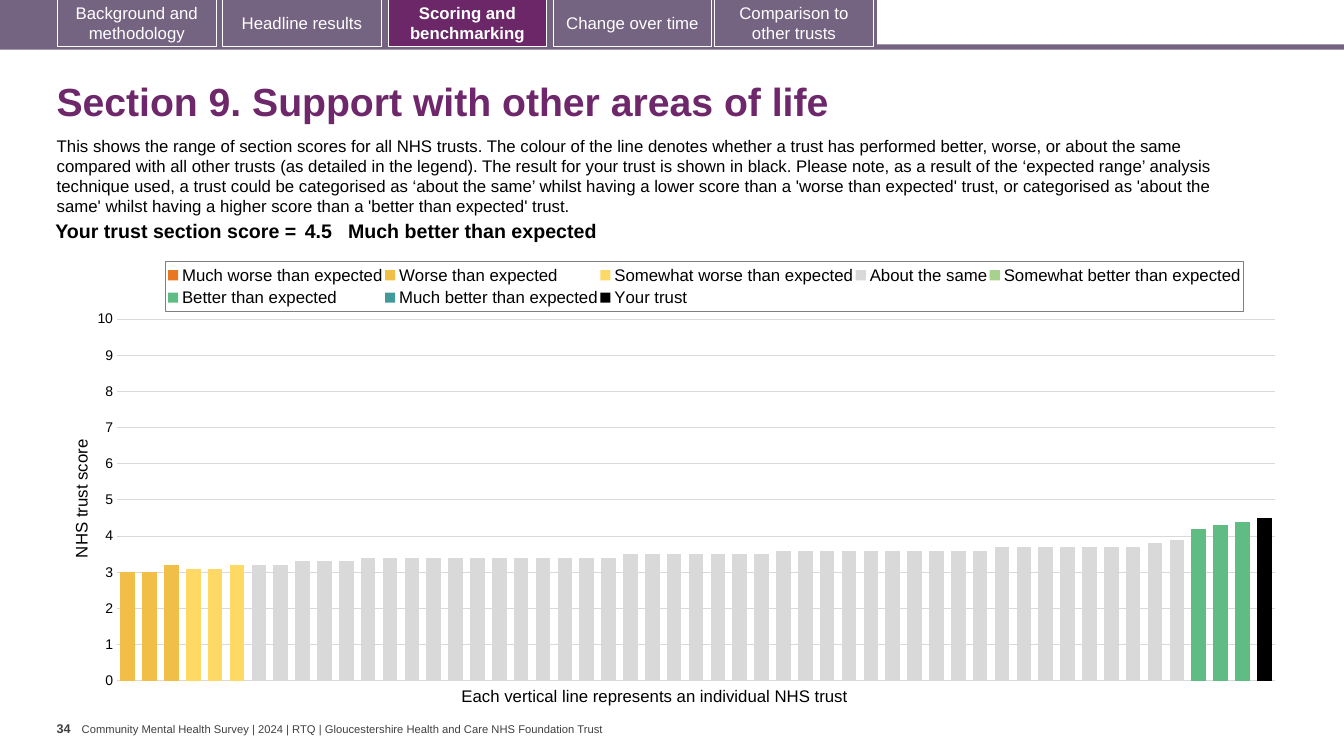
from copy import deepcopy
from dataclasses import dataclass

from lxml import etree
from pptx import Presentation
from pptx.chart.data import CategoryChartData
from pptx.dml.color import RGBColor
from pptx.enum.chart import XL_CHART_TYPE, XL_LEGEND_POSITION, XL_TICK_MARK
from pptx.enum.shapes import MSO_SHAPE
from pptx.enum.text import MSO_ANCHOR, PP_ALIGN
from pptx.oxml import parse_xml
from pptx.oxml.ns import qn
from pptx.util import Cm, Pt

COLUMN = XL_CHART_TYPE.COLUMN_CLUSTERED
LEGEND_TOP = XL_LEGEND_POSITION.TOP
NO_TICK = XL_TICK_MARK.NONE
RECTANGLE = MSO_SHAPE.RECTANGLE
MIDDLE, TOP = MSO_ANCHOR.MIDDLE, MSO_ANCHOR.TOP
LEFT, CENTER, RIGHT = PP_ALIGN.LEFT, PP_ALIGN.CENTER, PP_ALIGN.RIGHT


@dataclass(frozen=True)
class Theme:
    font: str = "Arial"
    band: str = "756382"
    active: str = "6B2768"
    title: str = "6D276A"
    white: str = "FFFFFF"
    black: str = "000000"
    footer: str = "404040"
    grid: str = "D9D9D9"
    legend_line: str = "7F7F7F"
    title_size: float = 28
    score_size: float = 14
    body_size: float = 12
    axis_size: float = 10
    page_size: float = 9
    footer_size: float = 8


THEME = Theme()

TABS = [
    ("Background and methodology", 1.45),
    ("Headline results", 5.61),
    ("Scoring and benchmarking", 9.78),
    ("Change over time", 13.94),
    ("Comparison to other trusts", 18.01),
]
ACTIVE_TAB = "Scoring and benchmarking"
INTRODUCTION = (
    "This shows the range of section scores for all NHS trusts. The colour of the line "
    "denotes whether a trust has performed better, worse, or about the same compared with "
    "all other trusts (as detailed in the legend). The result for your trust is shown in "
    "black. Please note, as a result of the ‘expected range’ analysis technique used, a "
    "trust could be categorised as ‘about the same’ whilst having a lower score than a "
    "'worse than expected' trust, or categorised as 'about the same' whilst having a "
    "higher score than a 'better than expected' trust."
)
SCORE_CELLS = [
    ("Your trust section score =", 6.68, RIGHT, 0.1),
    ("4.5", 1.19, LEFT, 0.1),
    ("Much better than expected", 21.82, LEFT, 0),
]
TRUST_COUNT = 53
ABOUT_THE_SAME = (
    [3.2] * 2 + [3.3] * 3 + [3.4] * 12 + [3.5] * 7 + [3.6] * 10 + [3.7] * 7 + [3.8, 3.9]
)
SERIES = [
    ("Much worse than expected", "E87722", 0, []),
    ("Worse than expected", "F1BE48", 0, [3, 3, 3.2]),
    ("Somewhat worse than expected", "FFD966", 3, [3.1, 3.1, 3.2]),
    ("About the same", "D9D9D9", 6, ABOUT_THE_SAME),
    ("Somewhat better than expected", "A9D18E", 0, []),
    ("Better than expected", "5FBD83", 49, [4.2, 4.3, 4.4]),
    ("Much better than expected", "419999", 52, [4.5]),
    ("Your trust", "000000", 52, [4.5]),
]


def style_font(font, size, color, bold=False):
    font.name = THEME.font
    font.size = Pt(size)
    font.bold = bold
    font.color.rgb = RGBColor.from_string(color)


def write_text(frame, text, size, color, bold=False, align=LEFT):
    paragraph = frame.paragraphs[0]
    paragraph.alignment = align
    run = paragraph.add_run()
    run.text = text
    style_font(run.font, size, color, bold)
    return paragraph


def add_rectangle(slide, left, top, width, height, fill):
    shape = slide.shapes.add_shape(RECTANGLE, Cm(left), Cm(top), Cm(width), Cm(height))
    shape.shadow.inherit = False
    shape.fill.solid()
    shape.fill.fore_color.rgb = RGBColor.from_string(fill)
    shape.line.fill.background()
    return shape


def add_tab(slide, label, left):
    active = label == ACTIVE_TAB
    shape = add_rectangle(slide, left, -0.03, 4, 1.2, THEME.active if active else THEME.band)
    shape.line.color.rgb = RGBColor.from_string(THEME.white)
    shape.line.width = Pt(0.75)
    shape.text_frame.word_wrap = True
    shape.text_frame.vertical_anchor = MIDDLE
    write_text(shape.text_frame, label, THEME.body_size, THEME.white, active, CENTER)


def add_text(slide, text, box, size, color, bold=False, wrap=False, anchor=TOP, margins=(0.25, 0.13)):
    frame = slide.shapes.add_textbox(*map(Cm, box)).text_frame
    frame.word_wrap = wrap
    frame.vertical_anchor = anchor
    frame.margin_left = frame.margin_right = Cm(margins[0])
    frame.margin_top = frame.margin_bottom = Cm(margins[1])
    write_text(frame, text, size, color, bold)


def set_title(slide, text):
    title = slide.shapes.title
    title.left, title.top, title.width, title.height = Cm(1.17), Cm(1.7), Cm(31.72), Cm(1.83)
    title.text_frame.vertical_anchor = MIDDLE
    write_text(title.text_frame, text, THEME.title_size, THEME.title, True).line_spacing = 0.9


def add_score_table(slide):
    width = sum(cell[1] for cell in SCORE_CELLS)
    frame = slide.shapes.add_table(1, len(SCORE_CELLS), Cm(0.9), Cm(5.46), Cm(width), Cm(0.78))
    table = frame.table
    table.first_row = table.horz_banding = False
    for index, (text, column_width, align, margin) in enumerate(SCORE_CELLS):
        table.columns[index].width = Cm(column_width)
        cell = table.cell(0, index)
        cell.fill.background()
        cell.margin_left = cell.margin_right = Cm(margin)
        cell.margin_top = cell.margin_bottom = Cm(0.1)
        write_text(cell.text_frame, text, THEME.score_size, THEME.black, True, align)


def place_part(element, index, inner=False, **fractions):
    for layout in element.findall(qn("c:layout")):
        element.remove(layout)
    layout = etree.Element(qn("c:layout"))
    manual = etree.SubElement(layout, qn("c:manualLayout"))
    if inner:
        etree.SubElement(manual, qn("c:layoutTarget"), val="inner")
    for name in ("x", "y"):
        etree.SubElement(manual, qn(f"c:{name}Mode"), val="edge")
    for name, fraction in fractions.items():
        etree.SubElement(manual, qn(f"c:{name}"), val=str(fraction))
    element.insert(index, layout)


def format_legend(chart):
    chart.has_legend = True
    chart.legend.position = LEGEND_TOP
    chart.legend.include_in_layout = False
    style_font(chart.legend.font, THEME.body_size, THEME.black)
    element = chart._chartSpace.find(f".//{qn('c:legend')}")
    place_part(element, 1, x=0.08, y=0.03, w=0.88, h=0.11)
    element.find(qn("c:overlay")).addnext(parse_xml(
        '<c:spPr xmlns:c="http://schemas.openxmlformats.org/drawingml/2006/chart" '
        'xmlns:a="http://schemas.openxmlformats.org/drawingml/2006/main">'
        f'<a:ln w="9525"><a:solidFill><a:srgbClr val="{THEME.legend_line}"/></a:solidFill></a:ln>'
        "</c:spPr>"
    ))


def format_axes(chart):
    chart.category_axis.visible = False
    axis = chart.value_axis
    axis.minimum_scale, axis.maximum_scale, axis.major_unit = 0, 10, 1
    axis.major_tick_mark = axis.minor_tick_mark = NO_TICK
    axis.format.line.fill.background()
    axis.major_gridlines.format.line.color.rgb = RGBColor.from_string(THEME.grid)
    axis.major_gridlines.format.line.width = Pt(0.75)
    axis.tick_labels.number_format = "0"
    axis.tick_labels.number_format_is_linked = False
    style_font(axis.tick_labels.font, THEME.axis_size, THEME.black)
    write_text(axis.axis_title.text_frame, "NHS trust score", THEME.body_size, THEME.black)
    place_part(axis.axis_title._element, 1, x=0, y=0.42)


def move_last_series_to_right_axis(plot_area):
    left_bars = plot_area.find(qn("c:barChart"))
    right_bars = deepcopy(left_bars)
    left_bars.remove(left_bars.findall(qn("c:ser"))[-1])
    for series in right_bars.findall(qn("c:ser"))[:-1]:
        right_bars.remove(series)
    left_bars.addnext(right_bars)
    axes = [deepcopy(plot_area.find(qn(tag))) for tag in ("c:valAx", "c:catAx")]
    ids = {axis.find(qn("c:axId")).get("val"): str(5001 + i) for i, axis in enumerate(axes)}
    for parent in (right_bars, *axes):
        for tag in ("c:axId", "c:crossAx"):
            for reference in parent.findall(qn(tag)):
                reference.set("val", ids[reference.get("val")])
    value_axis = axes[0]
    for tag in ("c:majorGridlines", "c:title"):
        value_axis.remove(value_axis.find(qn(tag)))
    for tag, value in (("axPos", "r"), ("majorTickMark", "out"), ("tickLblPos", "none"), ("crosses", "max")):
        value_axis.find(qn(f"c:{tag}")).set("val", value)
    plot_area.findall("*[" + qn("c:axId") + "]")[-1].addnext(value_axis)
    value_axis.addnext(axes[1])


def add_score_chart(slide):
    data = CategoryChartData(number_format="0.0")
    data.categories = [str(number) for number in range(1, TRUST_COUNT + 1)]
    for name, _, start, scores in SERIES:
        data.add_series(name, [None] * start + scores + [None] * (TRUST_COUNT - start - len(scores)))
    chart = slide.shapes.add_chart(COLUMN, Cm(1.71), Cm(6.26), Cm(30.86), Cm(11.28), data).chart
    chart.has_title = False
    style_font(chart.font, THEME.axis_size, THEME.black)
    plot = chart.plots[0]
    plot.vary_by_categories = False
    plot.gap_width, plot.overlap = 50, 100
    for series, (_, color, _, _) in zip(plot.series, SERIES):
        series.format.fill.solid()
        series.format.fill.fore_color.rgb = RGBColor.from_string(color)
    format_axes(chart)
    format_legend(chart)
    plot_area = chart._chartSpace.find(f".//{qn('c:plotArea')}")
    move_last_series_to_right_axis(plot_area)
    place_part(plot_area, 0, inner=True, x=0.04, y=0.158, w=0.946, h=0.808)


def main():
    presentation = Presentation()
    presentation.slide_width, presentation.slide_height = Cm(33.87), Cm(19.05)
    slide = presentation.slides.add_slide(presentation.slide_layouts[5])
    add_rectangle(slide, 0, 1.12, 33.87, 0.13, THEME.band)
    add_rectangle(slide, 0, 0, 22.1, 1.19, THEME.band)
    for label, left in TABS:
        add_tab(slide, label, left)
    set_title(slide, "Section 9. Support with other areas of life")
    add_text(slide, INTRODUCTION, (1.18, 3.28, 30.81, 2.31), THEME.body_size, THEME.black, wrap=True)
    add_score_chart(slide)
    add_score_table(slide)
    add_text(slide, "Each vertical line represents an individual NHS trust",
             (11.38, 17.15, 10.44, 0.76), THEME.body_size, THEME.black)
    add_text(slide, "34", (1.43, 18.03, 0.64, 1.02), THEME.page_size, THEME.footer, True, margins=(0, 0.13))
    add_text(slide, "Community Mental Health Survey | 2024 | RTQ | Gloucestershire Health and Care "
             "NHS Foundation Trust", (2.06, 18.2, 13.31, 0.33), THEME.footer_size, THEME.footer,
             anchor=MIDDLE, margins=(0, 0))
    presentation.save("out.pptx")


if __name__ == "__main__":
    main()
